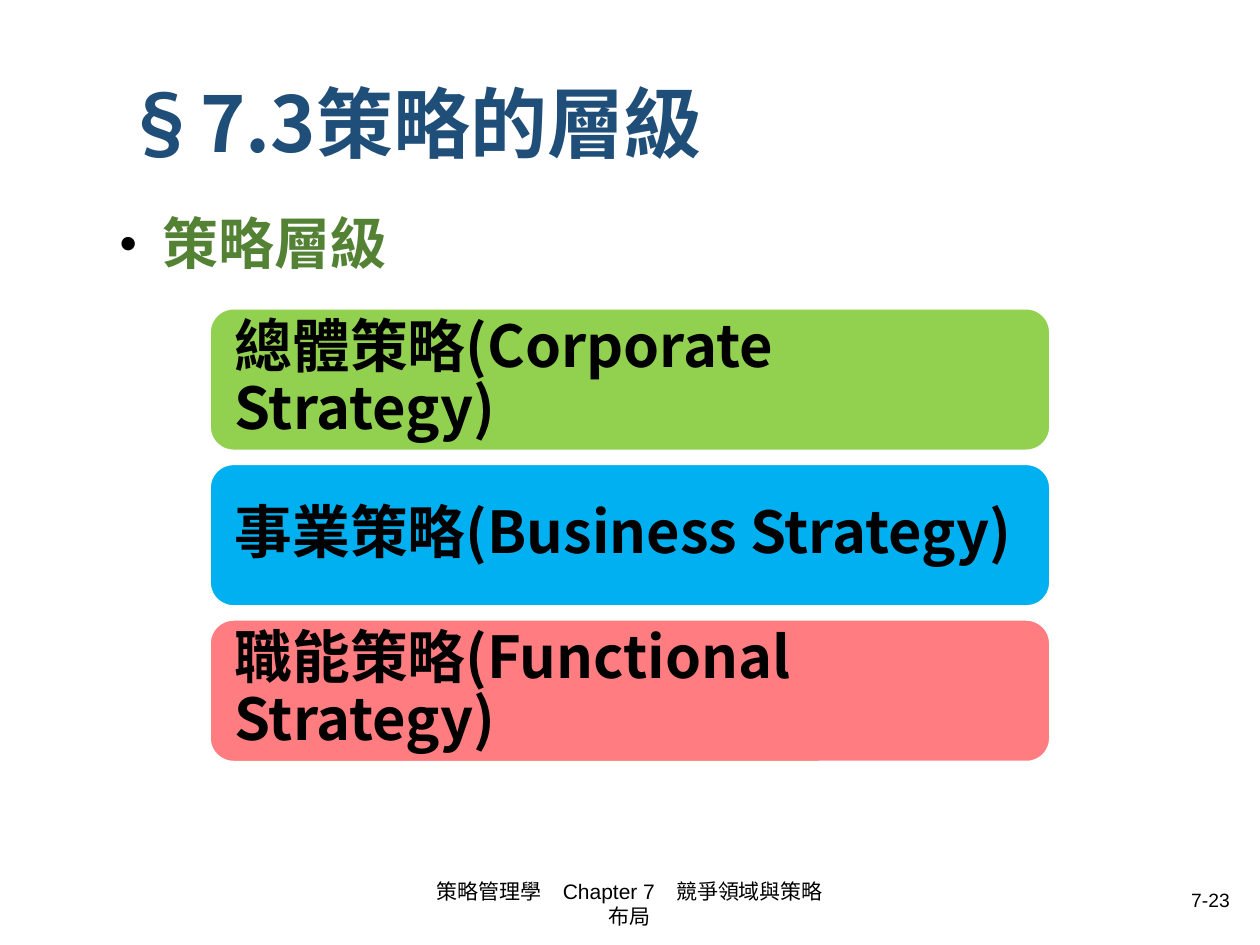
"""Build the slide on the three levels of strategy."""
from lxml import etree
from pptx import Presentation
from pptx.dml.color import RGBColor
from pptx.enum.shapes import MSO_SHAPE
from pptx.enum.text import MSO_ANCHOR, PP_ALIGN
from pptx.oxml.ns import qn
from pptx.util import Inches, Pt

ROUNDED = MSO_SHAPE.ROUNDED_RECTANGLE
TOP, MIDDLE = MSO_ANCHOR.TOP, MSO_ANCHOR.MIDDLE
LEFT, CENTER, RIGHT = PP_ALIGN.LEFT, PP_ALIGN.CENTER, PP_ALIGN.RIGHT

TITLE = "§7.3策略的層級"
TOPIC = "策略層級"
LEVELS = [
    ("總體策略(Corporate Strategy)", "92D050"),
    ("事業策略(Business Strategy)", "00B0F0"),
    ("職能策略(Functional Strategy)", "FF7C80"),
]
FOOTER = "策略管理學　Chapter 7　競爭領域與策略布局"
PAGE = "7-23"

HEADING_FONT, SMALL_FONT = "Noto Sans CJK SC", "Arial"
THEME = {
    "title": {"size": 44, "color": "1F4E79", "face": HEADING_FONT, "bold": True},
    "topic": {"size": 32, "color": "548235", "face": HEADING_FONT, "bold": True},
    "level": {"size": 33, "color": "000000", "face": HEADING_FONT, "bold": True},
    "footer": {"size": 12, "color": "000000", "face": SMALL_FONT, "bold": False},
    "page": {"size": 11, "color": "000000", "face": SMALL_FONT, "bold": False},
    "outline": "FFFFFF",
    "bullet": "000000",
}

SLIDE_W, SLIDE_H = 10, 7.5
BAR_W, BAR_H = SLIDE_W * 2 / 3, SLIDE_H * 0.15
BAR_LEFT, BAR_TOP, BAR_PITCH = (SLIDE_W - BAR_W) / 2, 2.45, 1.235
BAR_INSET = 0.14
TOPIC_INDENT = 0.34


def write(shape, text, role, anchor=MIDDLE, align=LEFT, spacing=1.0):
    frame = shape.text_frame
    frame.word_wrap = True
    frame.vertical_anchor = anchor
    paragraph = frame.paragraphs[0]
    paragraph.alignment = align
    paragraph.line_spacing = spacing
    run = paragraph.add_run()
    run.text = text
    style = THEME[role]
    run.font.color.rgb = RGBColor.from_string(style["color"])
    values = {"size": Pt(style["size"]), "name": style["face"], "bold": style["bold"]}
    for attribute, value in values.items():
        setattr(run.font, attribute, value)
    east_asian = etree.SubElement(run.font._element, qn("a:ea"))
    east_asian.set("typeface", HEADING_FONT)
    return paragraph


def add_text(slide, box, text, role, **layout):
    textbox = slide.shapes.add_textbox(*map(Inches, box))
    return write(textbox, text, role, **layout)


def add_bullet(paragraph):
    properties = paragraph._p.get_or_add_pPr()
    properties.set("marL", str(Inches(TOPIC_INDENT)))
    properties.set("indent", str(-Inches(TOPIC_INDENT)))
    color = etree.SubElement(properties, qn("a:buClr"))
    etree.SubElement(color, qn("a:srgbClr")).set("val", THEME["bullet"])
    for tag, key, value in [
        ("a:buSzPct", "val", "88000"),
        ("a:buFont", "typeface", SMALL_FONT),
        ("a:buChar", "char", "•"),
    ]:
        etree.SubElement(properties, qn(tag)).set(key, value)


def add_level(slide, row, text, fill):
    box = (BAR_LEFT, BAR_TOP + row * BAR_PITCH, BAR_W, BAR_H)
    bar = slide.shapes.add_shape(ROUNDED, *map(Inches, box))
    bar.shadow.inherit = False
    bar.fill.solid()
    bar.fill.fore_color.rgb = RGBColor.from_string(fill)
    bar.line.color.rgb = RGBColor.from_string(THEME["outline"])
    bar.line.width = Pt(1)
    for side in ("left", "top", "right", "bottom"):
        setattr(bar.text_frame, f"margin_{side}", Inches(BAR_INSET))
    write(bar, text, "level", spacing=0.9)


def main():
    deck = Presentation()
    deck.slide_width, deck.slide_height = Inches(SLIDE_W), Inches(SLIDE_H)
    slide = deck.slides.add_slide(deck.slide_layouts[6])
    add_text(slide, (0.88, 0.6, 8.31, 0.82), TITLE, "title", spacing=0.9)
    topic = add_text(slide, (0.85, 1.67, 8.31, 0.7), TOPIC, "topic", anchor=TOP, spacing=0.9)
    add_bullet(topic)
    for row, (text, fill) in enumerate(LEVELS):
        add_level(slide, row, text, fill)
    add_text(slide, (3.31, 6.97, 3.38, 0.4), FOOTER, "footer", align=CENTER)
    add_text(slide, (7.06, 6.99, 2.8, 0.3), PAGE, "page", align=RIGHT)
    deck.save("out.pptx")


if __name__ == "__main__":
    main()
